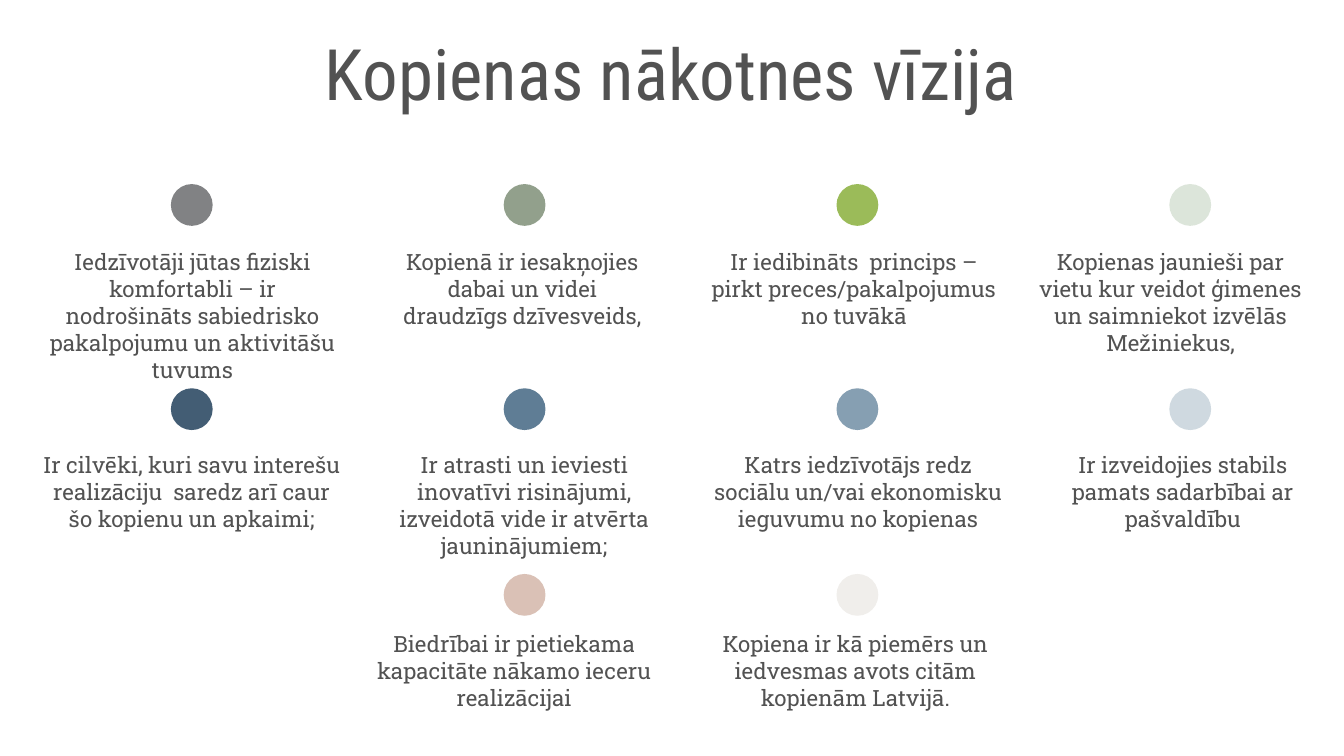
from dataclasses import dataclass

from pptx import Presentation
from pptx.dml.color import RGBColor as RGB
from pptx.enum.shapes import MSO_SHAPE as Shape
from pptx.enum.text import MSO_ANCHOR as Anchor, PP_ALIGN as Align
from pptx.util import Cm, Pt


@dataclass(frozen=True)
class Theme:
    ink: str = "525252"
    title_font: str = "Roboto Condensed"
    body_font: str = "Roboto Slab"
    title_size: int = 38
    body_size: int = 12


THEME = Theme()
DOT_SIZE = 0.79
DOT_LEFT = 3.23
COLUMN_STEP = 6.29
TEXT_HEIGHT = 2.59

# column, dot colour, text left, text width, text
ROWS = [
    (3.48, 4.70, [
        (0, "818284", 0.91, 5.46, "Iedzīvotāji jūtas fiziski komfortabli – ir nodrošināts "
                                  "sabiedrisko pakalpojumu un aktivitāšu tuvums"),
        (1, "92A08C", 7.54, 4.67, "Kopienā ir iesakņojies dabai un videi draudzīgs dzīvesveids,"),
        (2, "9BBB59", 13.41, 5.46, "Ir iedibināts  princips – pirkt preces/pakalpojumus no tuvākā"),
        (3, "DCE5DA", 19.51, 5.23, "Kopienas jaunieši par vietu kur veidot ģimenes "
                                   "un saimniekot izvēlās Mežiniekus,"),
    ]),
    (7.34, 8.53, [
        (0, "435D74", 0.74, 5.77, "Ir cilvēki, kuri savu interešu realizāciju  saredz arī "
                                  "caur šo kopienu un apkaimi;"),
        (1, "5F7D95", 7.42, 4.98, "Ir atrasti un ieviesti inovatīvi risinājumi, "
                                  "izveidotā vide ir atvērta jauninājumiem;"),
        (2, "869FB2", 13.31, 5.82, "Katrs iedzīvotājs redz sociālu un/vai ekonomisku "
                                   "ieguvumu no kopienas"),
        (3, "CFD9E0", 20.02, 4.67, "Ir izveidojies stabils pamats sadarbībai ar pašvaldību"),
    ]),
    (10.85, 11.91, [
        (1, "DAC1B6", 7.04, 5.36, "Biedrībai ir pietiekama kapacitāte nākamo ieceru realizācijai"),
        (2, "F0EEEB", 13.31, 5.72, "Kopiena ir kā piemērs un iedvesmas avots citām "
                                   "kopienām Latvijā."),
    ]),
]


def set_format(target, values):
    for name, value in values.items():
        setattr(target, name, value)


def add_text(s, text, left, top, width, height, font, size, anchor=Anchor.TOP):
    tf = s.shapes.add_textbox(Cm(left), Cm(top), Cm(width), Cm(height)).text_frame
    set_format(tf, {
        "word_wrap": True, "vertical_anchor": anchor,
        "margin_left": 0, "margin_right": 0, "margin_top": 0, "margin_bottom": 0,
    })
    p = tf.paragraphs[0]
    p.alignment = Align.CENTER
    r = p.add_run()
    r.text = text
    set_format(r.font, {"name": font, "size": Pt(size)})
    r.font.color.rgb = RGB.from_string(THEME.ink)


def add_dot(s, left, top, color):
    sp = s.shapes.add_shape(Shape.OVAL, Cm(left), Cm(top), Cm(DOT_SIZE), Cm(DOT_SIZE))
    sp.shadow.inherit = False
    sp.fill.solid()
    sp.fill.fore_color.rgb = RGB.from_string(color)
    sp.line.fill.background()


def main():
    prs = Presentation()
    set_format(prs, {"slide_width": Cm(25.4), "slide_height": Cm(14.29)})
    s = prs.slides.add_slide(prs.slide_layouts[6])
    add_text(s, "Kopienas nākotnes vīzija", 1.5, 0.64, 22.38, 1.52,
             THEME.title_font, THEME.title_size, Anchor.BOTTOM)
    for dot_top, text_top, items in ROWS:
        for column, color, left, width, text in items:
            add_dot(s, DOT_LEFT + column * COLUMN_STEP, dot_top, color)
            add_text(s, text, left, text_top, width, TEXT_HEIGHT,
                     THEME.body_font, THEME.body_size)
    prs.save("out.pptx")


if __name__ == "__main__":
    main()
